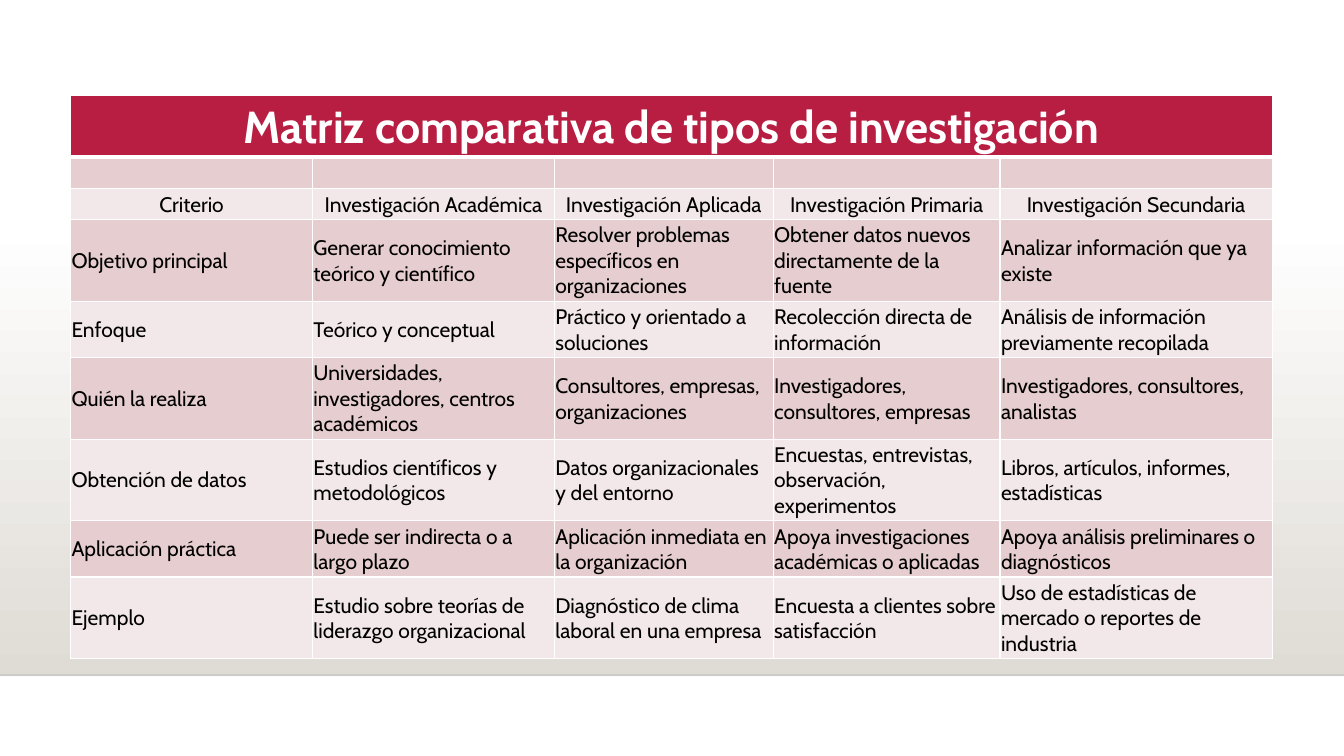
from lxml.etree import SubElement
from pptx import Presentation
from pptx.dml.color import RGBColor
from pptx.enum.shapes import MSO_CONNECTOR, MSO_SHAPE
from pptx.enum.text import MSO_ANCHOR, PP_ALIGN
from pptx.oxml.ns import qn
from pptx.util import Inches, Pt

COLORS = {
    "white": "FFFFFF",
    "black": "000000",
    "rule": "000001",
    "shade": "DFDBD5",
    "title": "B71E42",
    "dark_band": "E6CDCF",
    "light_band": "F3E8E9",
}
FONT = "Cabin"
WIDTH, HEIGHT = Inches(13.33), Inches(7.5)

# Positions and sizes in percent of the slide
LEFT, TOP = 5.25, 12.67
SHADE_TOP, FLOOR = 29.47, 89.33
COL_WIDTHS = [18, 18, 16.28, 16.88, 20.25]
TITLE_HEIGHT, LINE_HEIGHT, ROW_PADDING = 8.13, 3.33, 0.8

TITLE = "Matriz comparativa de tipos de investigación"
HEADINGS = ["Criterio", "Investigación Académica", "Investigación Aplicada",
            "Investigación Primaria", "Investigación Secundaria"]
# Each row: number of text lines, then its cells
ROWS = [
    (1, [""] * len(HEADINGS)),
    (1, HEADINGS),
    (3, ["Objetivo principal",
         "Generar conocimiento teórico y científico",
         "Resolver problemas específicos en organizaciones",
         "Obtener datos nuevos directamente de la fuente",
         "Analizar información que ya existe"]),
    (2, ["Enfoque",
         "Teórico y conceptual",
         "Práctico y orientado a soluciones",
         "Recolección directa de información",
         "Análisis de información previamente recopilada"]),
    (3, ["Quién la realiza",
         "Universidades, investigadores, centros académicos",
         "Consultores, empresas, organizaciones",
         "Investigadores, consultores, empresas",
         "Investigadores, consultores, analistas"]),
    (3, ["Obtención de datos",
         "Estudios científicos y metodológicos",
         "Datos organizacionales y del entorno",
         "Encuestas, entrevistas, observación, experimentos",
         "Libros, artículos, informes, estadísticas"]),
    (2, ["Aplicación práctica",
         "Puede ser indirecta o a largo plazo",
         "Aplicación inmediata en la organización",
         "Apoya investigaciones académicas o aplicadas",
         "Apoya análisis preliminares o diagnósticos"]),
    (3, ["Ejemplo",
         "Estudio sobre teorías de liderazgo organizacional",
         "Diagnóstico de clima laboral en una empresa",
         "Encuesta a clientes sobre satisfacción",
         "Uso de estadísticas de mercado o reportes de industria"]),
]


def color(name):
    return RGBColor.from_string(COLORS[name])


def across(percent):
    return round(WIDTH * percent / 100)


def down(percent):
    return round(HEIGHT * percent / 100)


def add_shade(s):
    sp = s.shapes.add_shape(MSO_SHAPE.RECTANGLE, 0, down(SHADE_TOP),
                            WIDTH, down(FLOOR - SHADE_TOP))
    sp.shadow.inherit = False
    sp.line.fill.background()
    sp.fill.gradient()
    sp.fill.gradient_angle = 270
    for stop, name in zip(sp.fill.gradient_stops, ["white", "shade"]):
        stop.color.rgb = color(name)


def add_floor_line(s):
    line = s.shapes.add_connector(MSO_CONNECTOR.STRAIGHT, 0, down(FLOOR),
                                  WIDTH, down(FLOOR))
    line.line.width = Pt(1)
    line.line.color.rgb = color("rule")
    spPr = line._element.spPr
    SubElement(spPr.find(".//" + qn("a:srgbClr")), qn("a:alpha"), val="20000")
    SubElement(spPr, qn("a:effectLst"))


def set_borders(cell, bottom):
    tcPr = cell._tc.get_or_add_tcPr()
    for side, width in [("L", 1), ("R", 1), ("T", 1), ("B", bottom)]:
        ln = SubElement(tcPr, qn("a:ln" + side), w=str(Pt(width)))
        fill = SubElement(ln, qn("a:solidFill"))
        SubElement(fill, qn("a:srgbClr"), val=COLORS["white"])


def fill_cell(cell, text, fill, size=15, ink="black", bold=False,
              align=PP_ALIGN.LEFT, bottom=1):
    set_borders(cell, bottom)
    cell.fill.solid()
    cell.fill.fore_color.rgb = color(fill)
    cell.vertical_anchor = MSO_ANCHOR.MIDDLE
    cell.margin_left = cell.margin_right = cell.margin_top = Inches(0.01)
    cell.margin_bottom = 0
    p = cell.text_frame.paragraphs[0]
    p.alignment = align
    if not text:
        p._p.get_or_add_endParaRPr().set("sz", str(size * 100))
        return
    r = p.add_run()
    r.text = text
    r.font.name = FONT
    r.font.size = Pt(size)
    r.font.bold = bold
    r.font.color.rgb = color(ink)


def add_matrix(s):
    heights = [TITLE_HEIGHT] + [ROW_PADDING + LINE_HEIGHT * n for n, _ in ROWS]
    frame = s.shapes.add_table(len(heights), len(COL_WIDTHS),
                               across(LEFT), down(TOP),
                               across(sum(COL_WIDTHS)), down(sum(heights)))
    table = frame.table
    table.first_row = table.horz_banding = False
    for column, width in zip(table.columns, COL_WIDTHS):
        column.width = across(width)
    for row, height in zip(table.rows, heights):
        row.height = down(height)

    # Title row
    table.cell(0, 0).merge(table.cell(0, len(COL_WIDTHS) - 1))
    for i, cell in enumerate(table.rows[0].cells):
        fill_cell(cell, "" if i else TITLE, "title", 32, "white", True,
                  PP_ALIGN.CENTER, bottom=3)

    # Banded rows
    for i, (_, texts) in enumerate(ROWS):
        band = "light_band" if i % 2 else "dark_band"
        align = PP_ALIGN.CENTER if texts is HEADINGS else PP_ALIGN.LEFT
        for cell, text in zip(table.rows[i + 1].cells, texts):
            fill_cell(cell, text, band, align=align)


def main():
    prs = Presentation()
    prs.slide_width, prs.slide_height = WIDTH, HEIGHT
    s = prs.slides.add_slide(prs.slide_layouts[6])
    add_shade(s)
    add_floor_line(s)
    add_matrix(s)
    prs.save("out.pptx")


if __name__ == "__main__":
    main()
